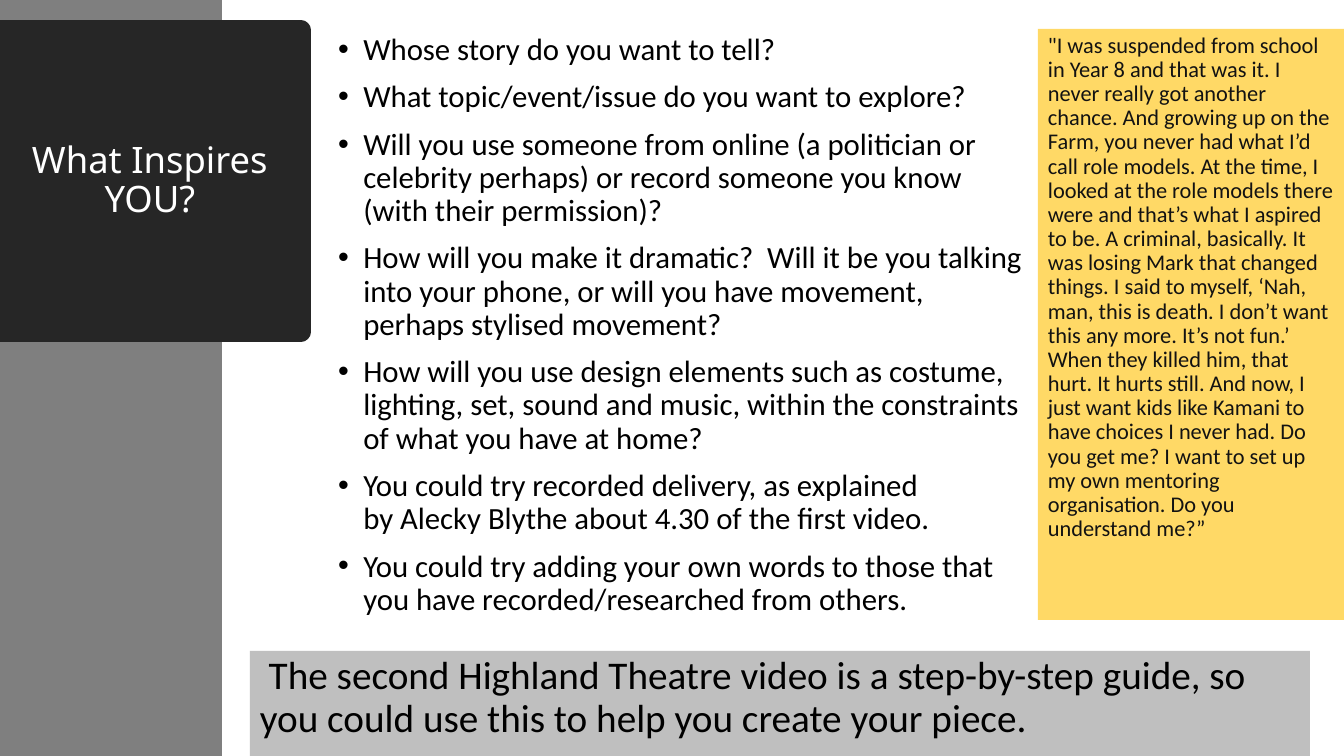
from dataclasses import dataclass

from lxml import etree
from pptx import Presentation, util as u
from pptx.dml.color import RGBColor
from pptx.enum import shapes, text
from pptx.oxml.ns import qn

PX_PER_INCH = 100.8
NO_BREAK = chr(160)


@dataclass(frozen=True)
class Theme:
    body_font: str = "Calibri"
    title_font: str = "Noto Sans"
    sidebar: str = "7F7F7F"
    title_fill: str = "262626"
    title_text: str = "FFFFFF"
    banner: str = "BFBFBF"
    quote: str = "FFD966"
    quote_text: str = "121212"
    body_text: str = "000000"
    title_size: int = 26
    body_size: int = 22
    banner_size: int = 28
    quote_size: int = 16
    title_border: float = 13.75
    line_spacing: float = 0.9


THEME = Theme()

QUESTIONS = [
    "Whose story do you want to tell?",
    "What topic/event/issue do you want to explore?",
    "Will you use someone from online (a politician or celebrity perhaps) "
    f"or{NO_BREAK}record someone{NO_BREAK}you know (with their permission)?",
    f"How will you make it dramatic?{NO_BREAK} Will it be you talking into your phone, "
    "or will you have movement, perhaps stylised movement?",
    "How will you use design elements such as costume, lighting, set, sound "
    "and music, within the constraints of what you have at home?",
    f"You could try recorded delivery, as explained by{NO_BREAK}Alecky{NO_BREAK}Blythe "
    "about 4.30 of the first video.",
    "You could try adding your own words to those that you have "
    "recorded/researched from others.",
]

GUIDE = (f"{NO_BREAK}The second Highland Theatre video is a step-by-step guide, "
         "so you could use this to help you create your piece.")

QUOTE = (
    "\"I was suspended from school in Year 8 and that was it. I never really got "
    "another chance. And growing up on the Farm, you never had what I’d call role "
    "models. At the time, I looked at the role models there were and that’s what I "
    "aspired to be. A criminal, basically. It was losing Mark that changed things. "
    "I said to myself, ‘Nah, man, this is death. I don’t want this any more. It’s "
    "not fun.’ When they killed him, that hurt. It hurts still. And now, I just "
    "want kids like Kamani to have choices I never had. Do you get me? I want to "
    "set up my own mentoring organisation. Do you understand me?”"
)


def px(length):
    return u.Inches(length / PX_PER_INCH)


def place(shape, left, top, width, height):
    shape.left, shape.top = px(left), px(top)
    shape.width, shape.height = px(width), px(height)


def fill(shape, color):
    shape.fill.solid()
    shape.fill.fore_color.rgb = RGBColor.from_string(color)


def style(paragraph, font, size, color, align=text.PP_ALIGN.LEFT, before=0, after=0):
    paragraph.font.name = font
    paragraph.font.size = u.Pt(size)
    paragraph.font.color.rgb = RGBColor.from_string(color)
    paragraph.alignment = align
    paragraph.line_spacing = THEME.line_spacing
    paragraph.space_before = u.Pt(before)
    paragraph.space_after = u.Pt(after)


def add_bullet(paragraph):
    properties = paragraph._p.get_or_add_pPr()
    indent = u.Inches(0.25)
    properties.set("marL", str(indent))
    properties.set("indent", str(-indent))
    etree.SubElement(properties, qn("a:buFont"), typeface="Arial")
    etree.SubElement(properties, qn("a:buChar"), char="•")
    # The schema wants bullets ahead of the default run properties.
    properties.append(properties.find(qn("a:defRPr")))


def add_panel(slide, box, color):
    panel = slide.shapes.add_shape(shapes.MSO_SHAPE.RECTANGLE, *map(px, box))
    panel.shadow.inherit = False
    panel.line.fill.background()
    fill(panel, color)
    return panel


def add_text_panel(slide, box, color, wording, size, text_color):
    frame = add_panel(slide, box, color).text_frame
    frame.word_wrap = True
    frame.vertical_anchor = text.MSO_ANCHOR.TOP
    frame.text = wording
    style(frame.paragraphs[0], THEME.body_font, size, text_color, after=6)


def add_sidebar(slide):
    """Put the sidebar behind the placeholders."""
    sidebar = add_panel(slide, (0, 0, 222, 756), THEME.sidebar)
    sidebar.element.getparent().insert(2, sidebar.element)


def set_title(title, wording):
    place(title, -1, 30, 302, 302)
    fill(title, THEME.title_fill)
    title.line.color.rgb = RGBColor.from_string(THEME.title_fill)
    title.line.width = u.Pt(THEME.title_border)
    frame = title.text_frame
    frame.text = wording
    frame.auto_size = text.MSO_AUTO_SIZE.NONE
    frame.vertical_anchor = text.MSO_ANCHOR.MIDDLE
    style(frame.paragraphs[0], THEME.title_font, THEME.title_size,
          THEME.title_text, text.PP_ALIGN.CENTER)


def set_questions(body, questions):
    place(body, 328, 29, 709, 578)
    frame = body.text_frame
    frame.text = "\n".join(questions)
    frame.auto_size = text.MSO_AUTO_SIZE.NONE
    for paragraph in frame.paragraphs:
        style(paragraph, THEME.body_font, THEME.body_size, THEME.body_text, before=10)
        add_bullet(paragraph)


def main():
    presentation = Presentation()
    presentation.slide_width, presentation.slide_height = px(1344), px(756)
    slide = presentation.slides.add_slide(presentation.slide_layouts[1])
    add_sidebar(slide)
    set_title(slide.shapes.title, "What Inspires YOU?")
    set_questions(slide.placeholders[1], QUESTIONS)
    add_text_panel(slide, (250, 651, 1060, 105), THEME.banner,
                   GUIDE, THEME.banner_size, THEME.body_text)
    add_text_panel(slide, (1038, 29, 306, 591), THEME.quote,
                   QUOTE, THEME.quote_size, THEME.quote_text)
    presentation.save("out.pptx")


if __name__ == "__main__":
    main()
